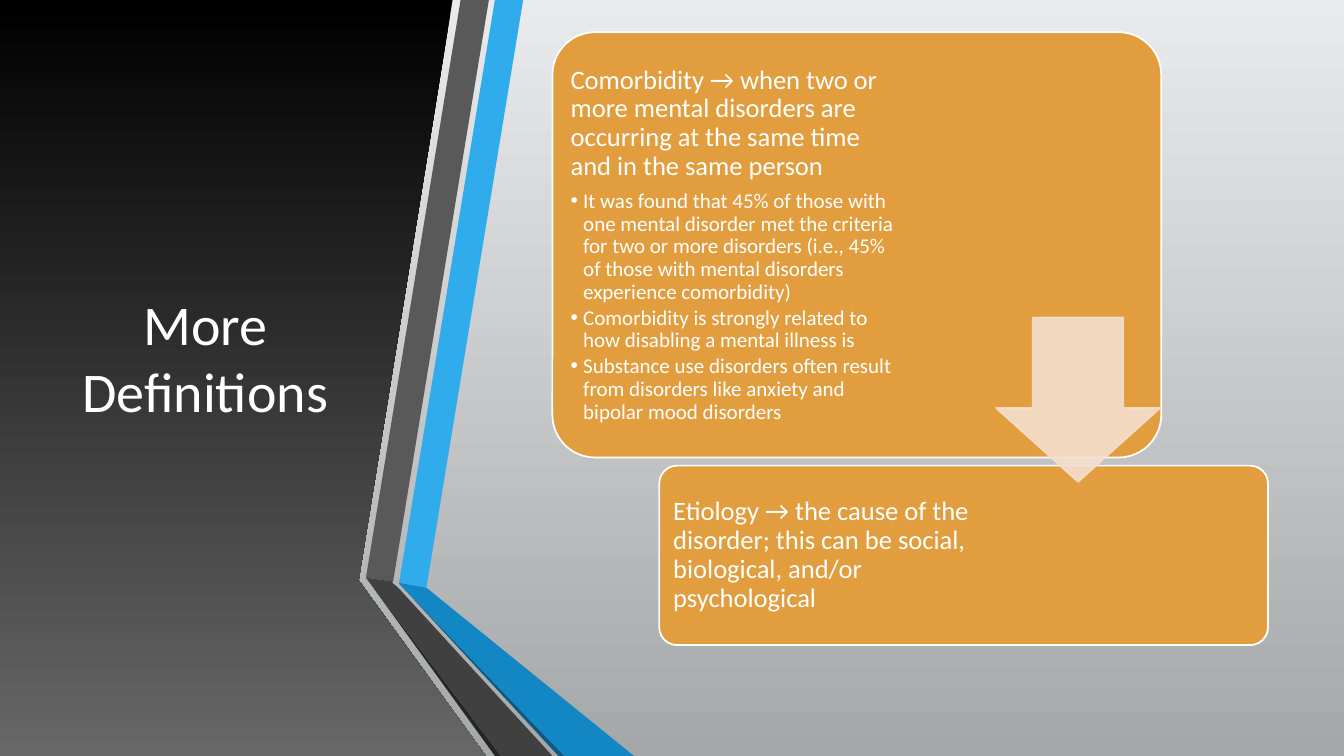
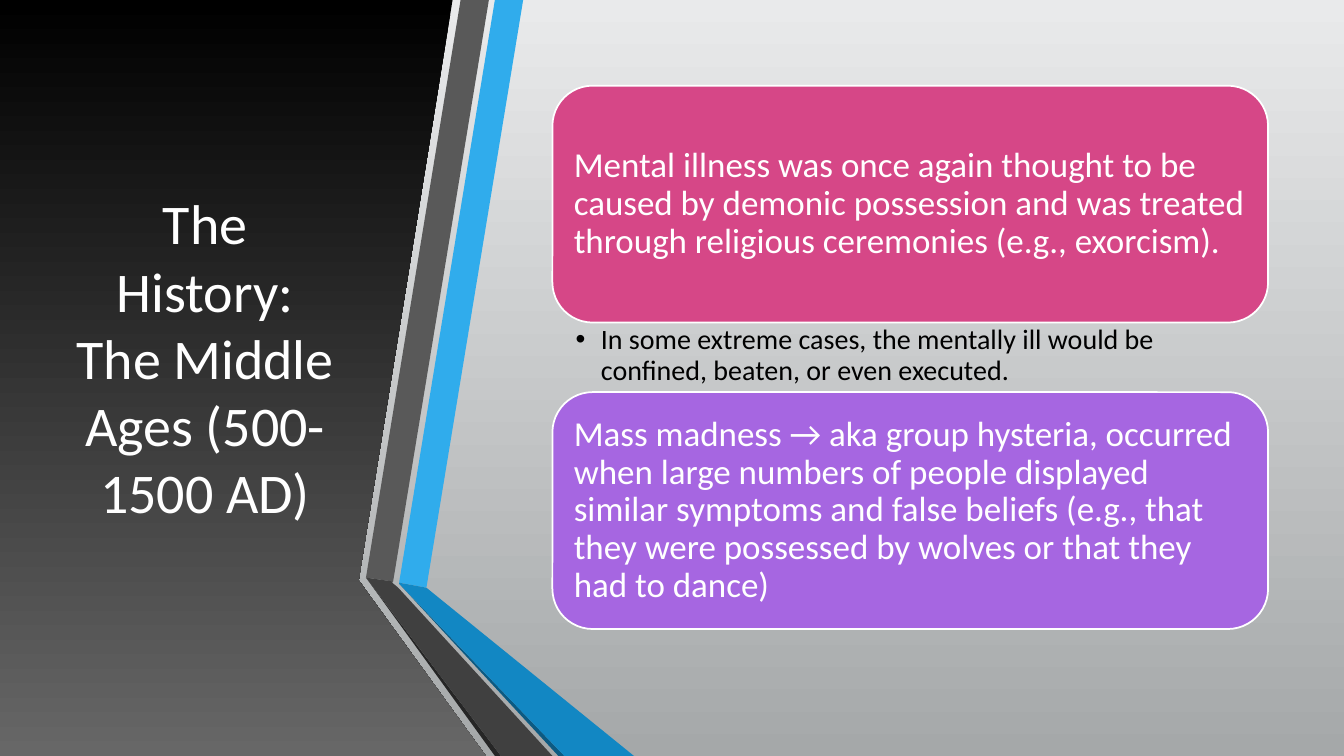
from dataclasses import dataclass
from typing import Optional

import pptx
import pptx.dml.color
import pptx.enum.shapes
import pptx.enum.text
import pptx.oxml
import pptx.oxml.ns
import pptx.util

Pt = pptx.util.Pt
ShapeKind = pptx.enum.shapes.MSO_SHAPE
Anchor = pptx.enum.text.MSO_ANCHOR
Align = pptx.enum.text.PP_ALIGN
ROUND_CORNER_INSET = 0.29289


@dataclass(frozen=True)
class Theme:
    font: str = "Calibri"
    white: str = "FFFFFF"
    black: str = "000000"
    panel_bottom: str = "676767"
    backdrop_top: str = "E9EAEB"
    backdrop_bottom: str = "A5A8A9"
    orange: str = "E29D3E"
    arrow: str = "F4DFCE"
    pink: str = "D64787"
    purple: str = "A666E1"
    title_size: float = 40
    statement_size: float = 25
    list_size: float = 20
    definition_size: float = 19
    detail_size: float = 15
    outline: float = 1.25


THEME = Theme()


@dataclass(frozen=True)
class Box:
    left: float
    top: float
    width: float
    height: float


@dataclass(frozen=True)
class Line:
    text: str
    size: float
    color: str = THEME.white
    space_after: float = 0
    bullet_indent: Optional[float] = None


@dataclass(frozen=True)
class Card:
    box: Box
    color: str
    corner: float
    padding_left: float
    padding_right: float
    lines: tuple[Line, ...]


@dataclass(frozen=True)
class Band:
    color: str
    points: tuple[tuple[float, float], ...]


SLIDE = Box(0, 0, 960, 540)
TITLE = Box(42.5, 54, 208.1, 401.8)
CONTENT_LEFT = 394.6
CONTENT_WIDTH = 511.2

PANEL = Band(THEME.black, (
    (0, 0), (323.3, 0), (256.3, 414), (256.3, 414.7), (347, 540), (0, 540)))
RIBBON = (
    Band("30ACEC", ((285.1, 416.2), (304.6, 419.8), (373.7, 0), (353.5, 0))),
    Band("595959", ((349.2, 0), (329, 0), (261.4, 412.6), (280.8, 415.4))),
    Band("262626", ((261.4, 412.6), (353.5, 540), (357.8, 540))),
    Band("0C5A82", ((285.1, 416.9), (398.9, 540), (403.2, 540))),
    Band("1287C3", ((285.1, 416.2), (285.1, 416.9), (403.2, 540),
                    (452.9, 540), (304.6, 419.8))),
    Band("404040", ((394.6, 540), (284.4, 419.8), (280.1, 416.2),
                    (280.8, 415.4), (261.4, 412.6), (357.8, 540))),
)


def rgb(color: str) -> pptx.dml.color.RGBColor:
    return pptx.dml.color.RGBColor.from_string(color)


def place(shape, box: Box) -> None:
    shape.left, shape.top = Pt(box.left), Pt(box.top)
    shape.width, shape.height = Pt(box.width), Pt(box.height)


def fill_downward(fill, top: str, bottom: str) -> None:
    fill.gradient()
    fill.gradient_angle = 270
    for stop, color, position in zip(fill.gradient_stops, (top, bottom), (0, 1)):
        stop.color.rgb = rgb(color)
        stop.position = position


def add_band(slide, band: Band):
    start, *rest = [(Pt(x), Pt(y)) for x, y in band.points]
    builder = slide.shapes.build_freeform(*start)
    builder.add_line_segments(rest, close=True)
    shape = builder.convert_to_shape()
    shape.shadow.inherit = False
    shape.fill.solid()
    shape.fill.fore_color.rgb = rgb(band.color)
    shape.line.fill.background()
    return shape


def format_runs(paragraph, size: float, color: str) -> None:
    for run in paragraph.runs:
        run.font.name = THEME.font
        run.font.size = Pt(size)
        run.font.color.rgb = rgb(color)


def add_bullet(paragraph, indent: float) -> None:
    properties = paragraph._p.get_or_add_pPr()
    properties.set("marL", str(Pt(indent)))
    properties.set("indent", str(-Pt(indent)))
    namespace = pptx.oxml.ns.nsdecls("a")
    for markup in (f'<a:buFont {namespace} typeface="Arial"/>',
                   f'<a:buChar {namespace} char="•"/>'):
        properties.append(pptx.oxml.parse_xml(markup))


def write_lines(text_frame, lines: tuple[Line, ...]) -> None:
    text_frame.word_wrap = True
    text_frame.auto_size = pptx.enum.text.MSO_AUTO_SIZE.NONE
    text_frame.text = "\n".join(line.text for line in lines)
    for paragraph, line in zip(text_frame.paragraphs, lines):
        paragraph.alignment = Align.LEFT
        paragraph.line_spacing = 0.9
        paragraph.space_before = Pt(0)
        paragraph.space_after = Pt(line.space_after)
        format_runs(paragraph, line.size, line.color)
        if line.bullet_indent is not None:
            add_bullet(paragraph, line.bullet_indent)


def set_margins(text_frame, left: float, right: float, vertical: float) -> None:
    text_frame.margin_left, text_frame.margin_right = Pt(left), Pt(right)
    text_frame.margin_top = text_frame.margin_bottom = Pt(vertical)


def add_filled_shape(slide, kind, box: Box, color: str, outline: str,
                     adjustments: tuple[float, ...]):
    shape = slide.shapes.add_shape(kind, 0, 0, 0, 0)
    place(shape, box)
    for index, value in enumerate(adjustments):
        shape.adjustments[index] = value
    shape.shadow.inherit = False
    shape.fill.solid()
    shape.fill.fore_color.rgb = rgb(color)
    shape.line.color.rgb = rgb(outline)
    shape.line.width = Pt(THEME.outline)
    return shape


def add_card(slide, card: Card) -> None:
    shape = add_filled_shape(slide, ShapeKind.ROUNDED_RECTANGLE, card.box,
                             card.color, THEME.white, (card.corner,))
    inset = ROUND_CORNER_INSET * card.corner * min(card.box.width, card.box.height)
    set_margins(shape.text_frame, card.padding_left - inset,
                card.padding_right - inset, 0)
    shape.text_frame.vertical_anchor = Anchor.MIDDLE
    write_lines(shape.text_frame, card.lines)


def add_down_arrow(slide, box: Box) -> None:
    shape = add_filled_shape(slide, ShapeKind.DOWN_ARROW, box, THEME.arrow,
                             THEME.arrow, (0.55, 0.45))
    for color in shape.element.iter(pptx.oxml.ns.qn("a:srgbClr")):
        color.append(pptx.oxml.parse_xml(
            f'<a:alpha {pptx.oxml.ns.nsdecls("a")} val="90000"/>'))


def add_slide(presentation, layout_index: int, title_text: str):
    slide = presentation.slides.add_slide(presentation.slide_layouts[layout_index])
    fill_downward(slide.background.fill, THEME.backdrop_top, THEME.backdrop_bottom)
    panel = add_band(slide, PANEL)
    fill_downward(panel.fill, PANEL.color, THEME.panel_bottom)
    title = slide.shapes.title
    panel.element.addnext(title.element)
    place(title, TITLE)
    text_frame = title.text_frame
    text_frame.text = title_text
    text_frame.word_wrap = True
    text_frame.auto_size = pptx.enum.text.MSO_AUTO_SIZE.NONE
    text_frame.vertical_anchor = Anchor.MIDDLE
    text_frame.paragraphs[0].alignment = Align.CENTER
    format_runs(text_frame.paragraphs[0], THEME.title_size, THEME.white)
    for band in RIBBON:
        add_band(slide, band)
    return slide


def definition(text: str) -> Line:
    return Line(text, THEME.definition_size, space_after=6.65)


def detail(text: str) -> Line:
    return Line(text, THEME.detail_size, space_after=2.25, bullet_indent=9)


def build_definitions(presentation) -> None:
    slide = add_slide(presentation, 5, "More Definitions")
    card_width = 434.9
    add_card(slide, Card(
        Box(CONTENT_LEFT, 23, card_width, 303.8), THEME.orange, 0.1, 13, 190, (
            definition("Comorbidity → when two or more mental disorders are "
                       "occurring at the same time and in the same person"),
            detail("It was found that 45% of those with one mental disorder met "
                   "the criteria for two or more disorders (i.e., 45% of those "
                   "with mental disorders experience comorbidity)"),
            detail("Comorbidity is strongly related to how disabling a mental "
                   "illness is"),
            detail("Substance use disorders often result from disorders like "
                   "anxiety and bipolar mood disorders"),
        )))
    add_card(slide, Card(
        Box(CONTENT_LEFT + CONTENT_WIDTH - card_width, 332.6, card_width, 128.2),
        THEME.orange, 0.1, 10, 204, (
            definition("Etiology → the cause of the disorder; this can be social, "
                       "biological, and/or psychological"),
        )))
    add_down_arrow(slide, Box(711.4, 226.8, 117.4, 117.4))


def build_middle_ages(presentation) -> None:
    slide = add_slide(presentation, 1, "The History: The Middle Ages (500-1500 AD)")
    first_top, card_height, list_height = 61.2, 169.2, 49.7
    statements = (
        (THEME.pink, "Mental illness was once again thought to be caused by demonic "
                     "possession and was treated through religious ceremonies "
                     "(e.g., exorcism)."),
        (THEME.purple, "Mass madness → aka group hysteria, occurred when large "
                       "numbers of people displayed similar symptoms and false "
                       "beliefs (e.g., that they were possessed by wolves or that "
                       "they had to dance)"),
    )
    for index, (color, text) in enumerate(statements):
        top = first_top + index * (card_height + list_height)
        add_card(slide, Card(
            Box(CONTENT_LEFT, top, CONTENT_WIDTH, card_height), color, 0.17, 15.3, 15,
            (Line(text, THEME.statement_size, space_after=8.75),)))
    body = slide.placeholders[1]
    place(body, Box(CONTENT_LEFT, first_top + card_height, CONTENT_WIDTH, list_height))
    set_margins(body.text_frame, 16.6, 13.7, 2.2)
    write_lines(body.text_frame, (
        Line("In some extreme cases, the mentally ill would be confined, beaten, "
             "or even executed.", THEME.list_size, THEME.black, 4, 18),))


def main() -> None:
    presentation = pptx.Presentation()
    presentation.slide_width = Pt(SLIDE.width)
    presentation.slide_height = Pt(SLIDE.height)
    build_definitions(presentation)
    build_middle_ages(presentation)
    presentation.save("out.pptx")


if __name__ == "__main__":
    main()
